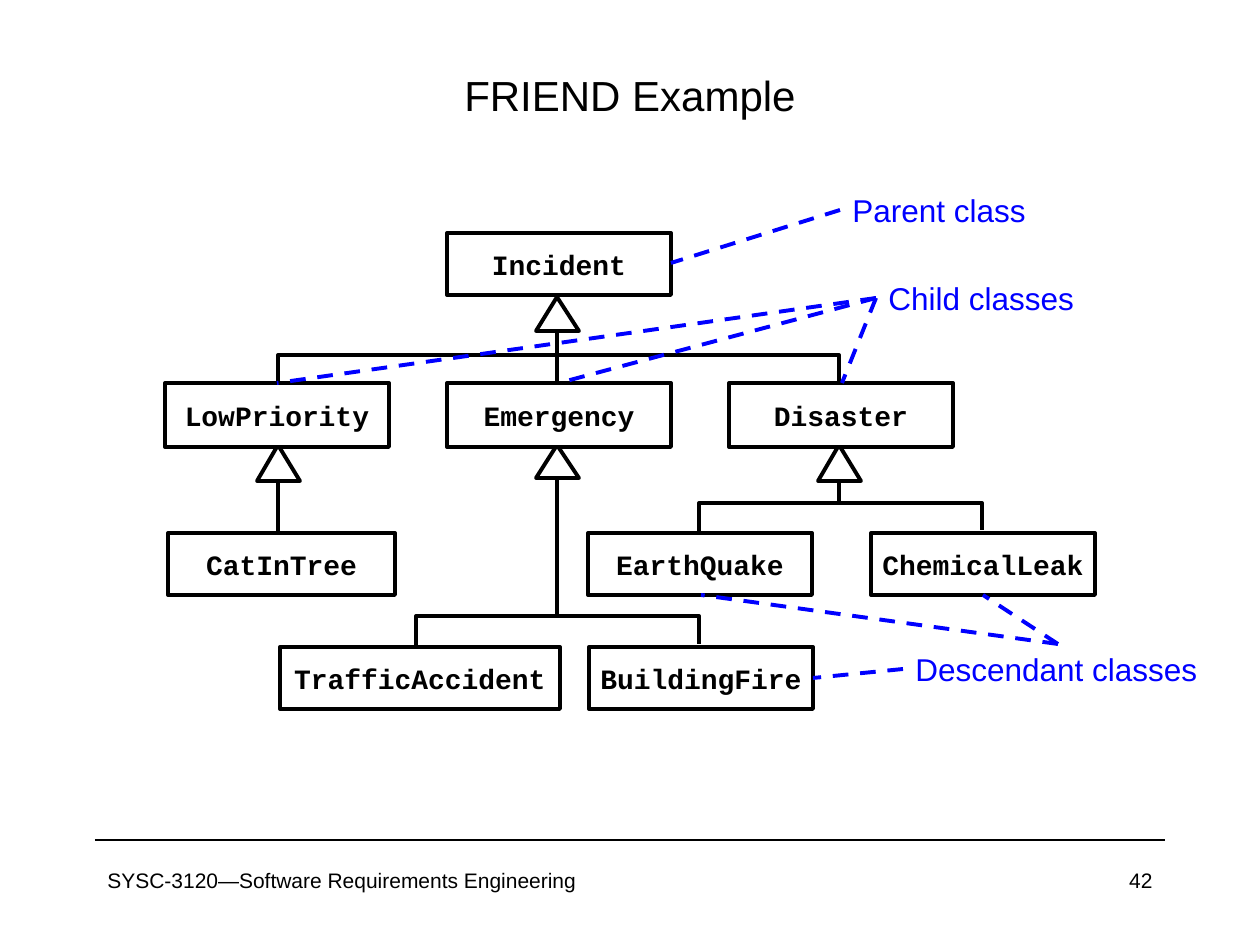
from lxml.etree import SubElement
from pptx import Presentation
from pptx.dml.color import RGBColor
from pptx.enum.dml import MSO_LINE
from pptx.enum.shapes import MSO_CONNECTOR, MSO_SHAPE
from pptx.enum.text import MSO_ANCHOR, PP_ALIGN
from pptx.oxml.ns import qn
from pptx.util import Emu, Pt

EMU_PER_PX = 914400 / 126
BLACK, WHITE, BLUE = "000000", "FFFFFF", "0000FF"

# Class name, left, top, width, height
CLASSES = [
    ("Incident", 447, 233, 224, 62),
    ("LowPriority", 165, 383, 224, 64),
    ("Emergency", 447, 383, 224, 64),
    ("Disaster", 729, 383, 224, 64),
    ("EarthQuake", 588, 533, 224, 62),
    ("ChemicalLeak", 871, 533, 224, 62),
    ("CatInTree", 168, 533, 227, 62),
    ("TrafficAccident", 280, 647, 280, 62),
    ("BuildingFire", 589, 647, 224, 62),
]
# Tip x, tip y, base y, end of the stem
INHERITANCE_ARROWS = [
    (557, 297, 331, 383),
    (839, 445, 481, 503),
    (278, 445, 481, 546),
    (557, 445, 478, 616),
]
# Left, right, top, left foot, right foot
BRANCHES = [
    (416, 699, 616, 646, 644),
    (699, 982, 503, 533, 530),
    (278, 839, 355, 383, 381),
]
# Text, left, top, width, height
LABELS = [
    ("Parent class", 840, 185, 200, 50),
    ("Child classes", 876, 273, 213, 50),
    ("Descendant classes", 903, 644, 310, 50),
]
# Start near the label, then the classes pointed at
POINTERS = [
    ((840, 210), [(671, 263)]),
    ((876, 298), [(842, 383), (559, 383), (277, 383)]),
    ((1058, 644), [(983, 595), (701, 595)]),
    ((903, 669), [(813, 678)]),
]


def px(value):
    return Emu(round(value * EMU_PER_PX))


def color(hex_string):
    return RGBColor.from_string(hex_string)


def format_line(line, line_color, width):
    line.color.rgb = color(line_color)
    line.width = Pt(width)


def write(shape, text, size, text_color=BLACK, align=PP_ALIGN.LEFT, font_name="Arial", bold=False):
    shape.text_frame.text = text
    paragraph = shape.text_frame.paragraphs[0]
    paragraph.alignment = align
    font = paragraph.font
    font.name, font.size, font.bold = font_name, Pt(size), bold
    font.color.rgb = color(text_color)


def add_text(slide, text, left, top, width, height, size, text_color=BLACK,
             align=PP_ALIGN.LEFT, wrap=True):
    box = slide.shapes.add_textbox(px(left), px(top), px(width), px(height))
    box.text_frame.word_wrap = wrap
    write(box, text, size, text_color, align)


def add_line(slide, start, end, line_color=BLACK, width=2.25, dashed=False):
    line = slide.shapes.add_connector(MSO_CONNECTOR.STRAIGHT, *map(px, start + end))
    format_line(line.line, line_color, width)
    if dashed:
        line.line.dash_style = MSO_LINE.DASH
    SubElement(line._element.spPr, qn("a:effectLst"))


def add_outline(slide, points, close):
    builder = slide.shapes.build_freeform(*points[0], scale=EMU_PER_PX)
    builder.add_line_segments(points[1:], close=close)
    shape = builder.convert_to_shape()
    shape.shadow.inherit = False
    shape.fill.background()
    format_line(shape.line, BLACK, 2.25)


def add_inheritance_arrow(slide, x, tip, base, stem_end):
    add_outline(slide, [(x, base), (x - 21, base), (x, tip), (x + 22, base)], close=True)
    add_line(slide, (x, stem_end), (x, base))


def add_branch(slide, left, right, top, left_foot, right_foot):
    points = [(left, left_foot), (left, top), (right, top), (right, right_foot)]
    add_outline(slide, points, close=False)


def add_class_box(slide, name, left, top, width, height):
    box = slide.shapes.add_shape(MSO_SHAPE.RECTANGLE, px(left), px(top), px(width), px(height))
    box.shadow.inherit = False
    box.fill.solid()
    box.fill.fore_color.rgb = color(WHITE)
    format_line(box.line, BLACK, 2.25)
    frame = box.text_frame
    frame.margin_left = frame.margin_right = frame.margin_top = frame.margin_bottom = 0
    frame.word_wrap = False
    frame.vertical_anchor = MSO_ANCHOR.MIDDLE
    write(box, name, 16, align=PP_ALIGN.CENTER, font_name="Courier New", bold=True)


def add_title(slide, text):
    title = slide.shapes.title
    title.left, title.top, title.width, title.height = px(95), px(58), px(1070), px(73)
    title.text_frame.vertical_anchor = MSO_ANCHOR.MIDDLE
    write(title, text, 24, align=PP_ALIGN.CENTER)


def add_footer(slide):
    add_line(slide, (95, 840), (1165, 840), width=1)
    add_text(slide, "SYSC-3120—Software Requirements Engineering", 95, 861, 535, 63, 12)
    add_text(slide, "42", 903, 861, 262, 63, 12, align=PP_ALIGN.RIGHT)


def main():
    presentation = Presentation()
    presentation.slide_width, presentation.slide_height = px(1260), px(945)
    slide = presentation.slides.add_slide(presentation.slide_layouts[5])
    add_footer(slide)
    add_title(slide, "FRIEND Example")
    for arrow in INHERITANCE_ARROWS:
        add_inheritance_arrow(slide, *arrow)
    for branch in BRANCHES:
        add_branch(slide, *branch)
    for class_box in CLASSES:
        add_class_box(slide, *class_box)
    for label in LABELS:
        add_text(slide, *label, size=18, text_color=BLUE, wrap=False)
    for start, targets in POINTERS:
        for target in targets:
            add_line(slide, start, target, BLUE, dashed=True)
    presentation.save("out.pptx")


if __name__ == "__main__":
    main()
